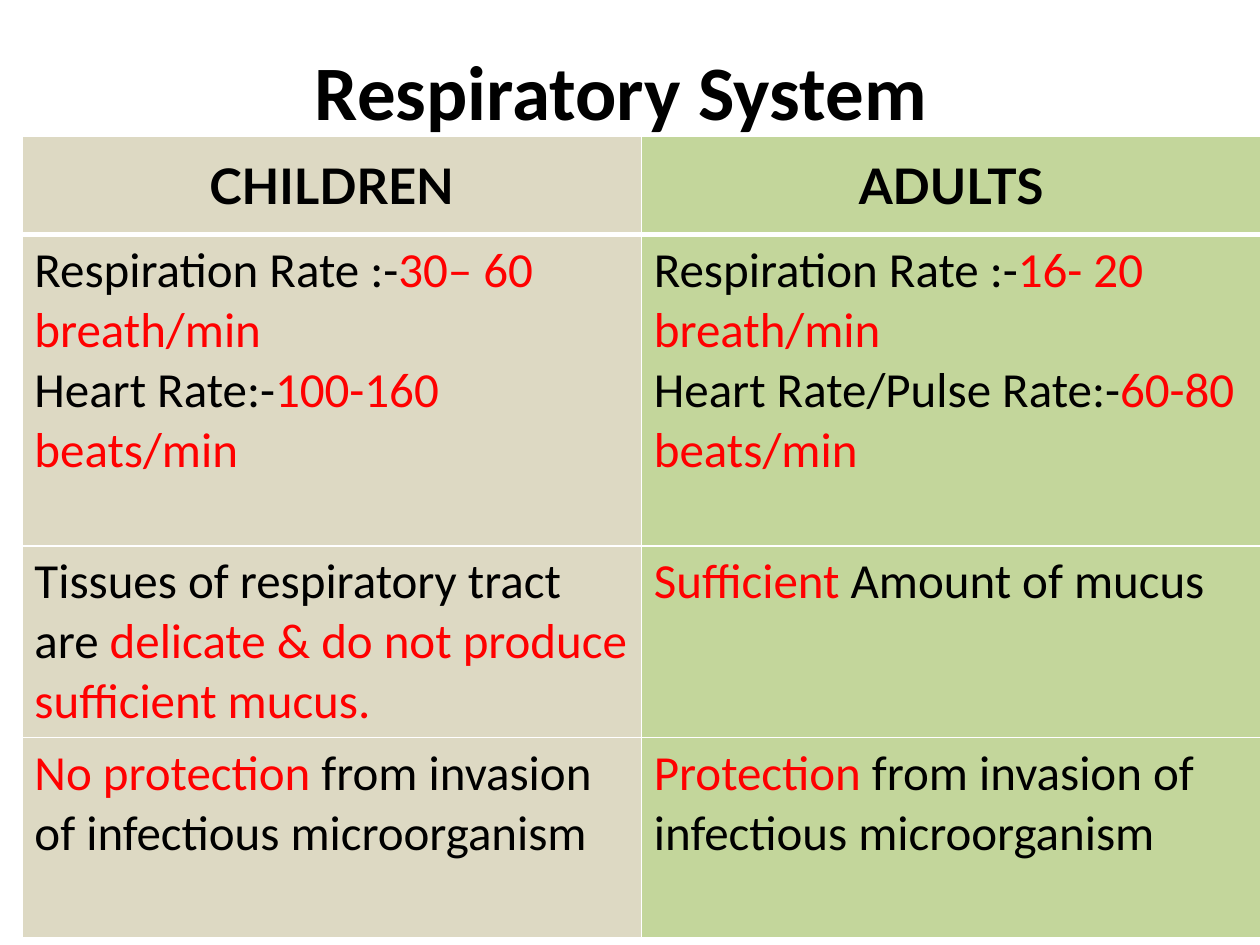
from lxml.etree import SubElement
from pptx import Presentation
from pptx.dml.color import RGBColor
from pptx.enum.text import MSO_ANCHOR as Anchor, PP_ALIGN as Align
from pptx.oxml.ns import qn
from pptx.util import Pt

COLORS = {"text": "000000", "key": "FF0000", "border": "FFFFFF",
          "children": "DDD9C3", "adults": "C3D69B"}

TITLE = "Respiratory System "
HEADERS = ["CHILDREN", "ADULTS"]
COLUMN_FILLS = ["children", "adults"]
# Each cell is a list of paragraphs, each paragraph a list of (text, color).
ROWS = [
    ([[("Respiration Rate :-", "text"), ("30– 60 breath/min", "key")],
      [("Heart Rate:-", "text"), ("100-160 beats/min", "key")]],
     [[("Respiration Rate :-", "text"), ("16- 20 breath/min", "key")],
      [("Heart Rate/Pulse Rate:-", "text"), ("60-80 beats/min", "key")]]),
    ([[("Tissues of respiratory tract are ", "text"),
       ("delicate & do not produce sufficient mucus.", "key")]],
     [[("Sufficient ", "key"), ("Amount of mucus", "text")]]),
    ([[("No protection ", "key"),
       ("from invasion of infectious microorganism", "text")]],
     [[("Protection", "key"),
       (" from invasion of infectious microorganism", "text")]]),
]

TITLE_FORMAT = {"name": "Calibri", "size": Pt(44), "bold": True}
HEADER_FORMAT = {"name": "Lato", "size": Pt(28), "bold": True}
BODY_FORMAT = {"name": "Calibri", "size": Pt(28), "bold": False}

TABLE_LEFT, TABLE_TOP = 12.5, 78
COLUMN_WIDTH = 354
ROW_HEIGHTS = [56, 178, 109.5, 114.5]


def write(frame, paragraphs, formats, align):
    for index, spans in enumerate(paragraphs):
        para = frame.paragraphs[0] if index == 0 else frame.add_paragraph()
        para.alignment = align
        for text, color in spans:
            span = para.add_run()
            span.text = text
            for name, value in formats.items():
                setattr(span.font, name, value)
            span.font.color.rgb = RGBColor.from_string(COLORS[color])


def set_borders(cell, widths):
    """Draw the cell's borders; widths maps a side (L, R, T, B) to points."""
    props = cell._tc.get_or_add_tcPr()
    for index, (side, width) in enumerate(widths.items()):
        line = SubElement(props, qn(f"a:ln{side}"), w=str(Pt(width)))
        fill = SubElement(line, qn("a:solidFill"))
        SubElement(fill, qn("a:srgbClr"), val=COLORS["border"])
        props.insert(index, line)


def add_title(page):
    box = page.shapes.add_textbox(Pt(36), Pt(6), Pt(648), Pt(90))
    frame = box.text_frame
    frame.word_wrap = True
    frame.vertical_anchor = Anchor.MIDDLE
    write(frame, [[(TITLE, "text")]], TITLE_FORMAT, Align.CENTER)


def add_comparison(page):
    headers = [[[(text, "text")]] for text in HEADERS]
    rows = [headers, *ROWS]
    table = page.shapes.add_table(
        len(rows), len(HEADERS), Pt(TABLE_LEFT), Pt(TABLE_TOP),
        Pt(COLUMN_WIDTH * len(HEADERS)), Pt(sum(ROW_HEIGHTS))).table
    for column in table.columns:
        column.width = Pt(COLUMN_WIDTH)
    for r, (cells, height) in enumerate(zip(rows, ROW_HEIGHTS)):
        table.rows[r].height = Pt(height)
        is_header = r == 0
        for c, paragraphs in enumerate(cells):
            cell = table.cell(r, c)
            cell.fill.solid()
            cell.fill.fore_color.rgb = RGBColor.from_string(COLORS[COLUMN_FILLS[c]])
            cell.vertical_anchor = Anchor.MIDDLE if is_header else Anchor.TOP
            set_borders(cell, {"L": 1, "R": 1, "T": 3 if r == 1 else 1,
                               "B": 3 if is_header else 1})
            write(cell.text_frame, paragraphs,
                  HEADER_FORMAT if is_header else BODY_FORMAT,
                  Align.CENTER if is_header else Align.LEFT)


def main():
    deck = Presentation()
    deck.slide_width, deck.slide_height = Pt(720), Pt(540)
    page = deck.slides.add_slide(deck.slide_layouts[6])
    add_title(page)
    add_comparison(page)
    deck.save("out.pptx")


if __name__ == "__main__":
    main()
